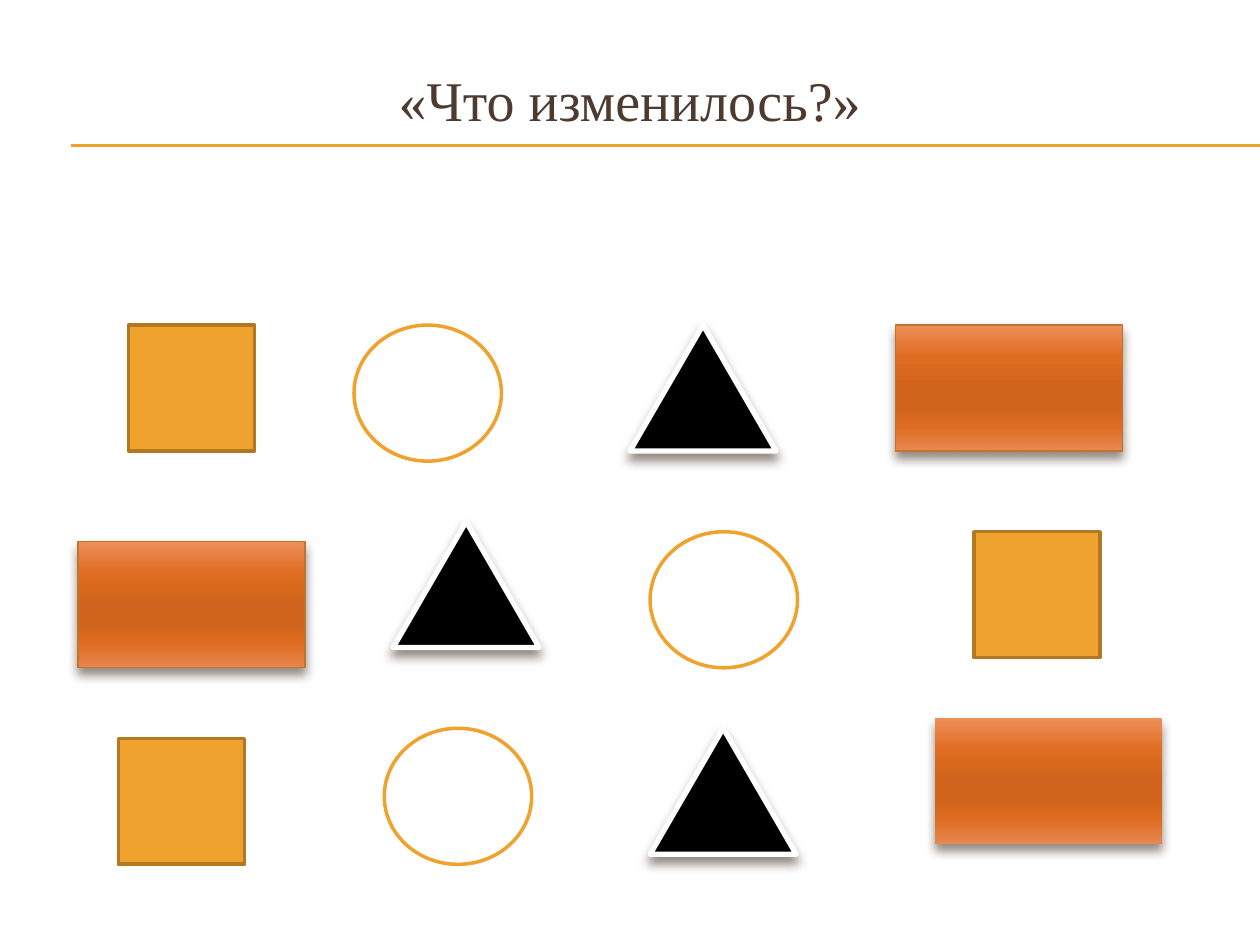
from lxml import etree
from pptx import Presentation
from pptx.dml.color import RGBColor
from pptx.enum.shapes import MSO_CONNECTOR, MSO_SHAPE
from pptx.enum.text import PP_ALIGN
from pptx.oxml import parse_xml
from pptx.oxml.ns import nsdecls, qn
from pptx.util import Inches, Pt

RECT, OVAL, TRIANGLE = MSO_SHAPE.RECTANGLE, MSO_SHAPE.OVAL, MSO_SHAPE.ISOSCELES_TRIANGLE
STRAIGHT = MSO_CONNECTOR.STRAIGHT
CENTER = PP_ALIGN.CENTER

COLORS = {
    "amber": "F0A22E", "amber_dark": "B27822", "rust": "C17529",
    "white": "FFFFFF", "black": "000000", "brown": "4E3B30",
}
GRADIENT = [(0, "EE8F5B"), (25, "E06D21"), (50, "D0641C"),
            (65, "D0641C"), (80, "DE6C20"), (100, "E88852")]
FIGURES = {
    "square": {"kind": RECT, "size": (1, 1), "fill": "amber", "line": ("amber_dark", 2)},
    "circle": {"kind": OVAL, "size": (1.17, 1.08), "fill": "white", "line": ("amber", 2)},
    "triangle": {"kind": TRIANGLE, "size": (1.16, 1), "fill": "black",
                 "line": ("white", 3), "shadow": True},
    "block": {"kind": RECT, "size": (1.8, 1), "line": ("rust", 0.79), "shadow": True},
}
FIGURES["plain block"] = {**FIGURES["block"], "line": None}
ROWS = [
    (2.58, [("square", 1.02, 0), ("circle", 2.81, 0), ("triangle", 5, 0), ("block", 7.11, 0)]),
    (4.22, [("block", 0.62, 0.08), ("triangle", 3.12, -0.08), ("circle", 5.16, 0),
            ("square", 7.73, 0)]),
    (5.78, [("square", 0.94, 0.08), ("circle", 3.05, 0), ("triangle", 5.16, 0),
            ("plain block", 7.42, -0.08)]),
]


def rgb(name):
    """Return the palette colour with the given name."""
    return RGBColor.from_string(COLORS[name])


def set_gradient(sp):
    """Fill a shape with the vertical orange gradient."""
    sp.fill.gradient()
    sp.fill.gradient_angle = 270
    stops = sp._element.spPr.find(qn("a:gradFill")).find(qn("a:gsLst"))
    for stop in list(stops):
        stops.remove(stop)
    for pos, color in GRADIENT:
        gs = etree.SubElement(stops, qn("a:gs"), pos=str(pos * 1000))
        etree.SubElement(gs, qn("a:srgbClr"), val=color)


def add_shadow(sp):
    """Put a soft brown shadow below a shape."""
    effects = sp._element.spPr.find(qn("a:effectLst"))
    effects.append(parse_xml(
        f'<a:outerShdw {nsdecls("a")} blurRad="{Pt(6)}" dist="{Pt(4)}" dir="5400000" '
        f'rotWithShape="0"><a:srgbClr val="{COLORS["brown"]}"><a:alpha val="60000"/>'
        '</a:srgbClr></a:outerShdw>'))


def add_figure(s, name, left, top):
    """Draw one named figure at the given place."""
    style = FIGURES[name]
    width, height = style["size"]
    sp = s.shapes.add_shape(style["kind"], Inches(left), Inches(top),
                            Inches(width), Inches(height))
    sp.shadow.inherit = False
    if "fill" in style:
        sp.fill.solid()
        sp.fill.fore_color.rgb = rgb(style["fill"])
    else:
        set_gradient(sp)
    if style["line"]:
        color, weight = style["line"]
        sp.line.color.rgb = rgb(color)
        sp.line.width = Pt(weight)
    else:
        sp.line.fill.background()
    if style.get("shadow"):
        add_shadow(sp)


def add_rules(s, left, top, width):
    """Draw the double rule under the title."""
    for y in (top, top + 0.01):
        rule = s.shapes.add_connector(STRAIGHT, Inches(left), Inches(y),
                                      Inches(left + width), Inches(y))
        rule.line.color.rgb = rgb("amber")
        rule.line.width = Pt(0.75)
        etree.SubElement(rule._element.spPr, qn("a:effectLst"))


def add_title(s, left, top, width, height):
    """Write the centred title at the top of its box."""
    tf = s.shapes.add_textbox(Inches(left), Inches(top), Inches(width),
                              Inches(height)).text_frame
    tf.word_wrap = True
    p = tf.paragraphs[0]
    for key, value in {"alignment": CENTER, "space_before": Pt(5)}.items():
        setattr(p, key, value)
    r = p.add_run()
    r.text = "«Что изменилось?»"
    for key, value in {"name": "Times New Roman", "size": Pt(32)}.items():
        setattr(r.font, key, value)
    r.font.color.rgb = rgb("brown")


def add_rows(s):
    """Draw the three rows of figures."""
    for top, row in ROWS:
        for name, left, shift in row:
            add_figure(s, name, left, top + shift)


def main():
    """Build and save the slide."""
    prs = Presentation()
    prs.slide_width, prs.slide_height = Inches(10), Inches(7.5)
    s = prs.slides.add_slide(prs.slide_layouts[6])
    add_rules(s, 0.56, 1.15, 9.44)
    add_title(s, 0.5, 0.47, 9, 6.23)
    add_rows(s)
    prs.save("out.pptx")


if __name__ == "__main__":
    main()
